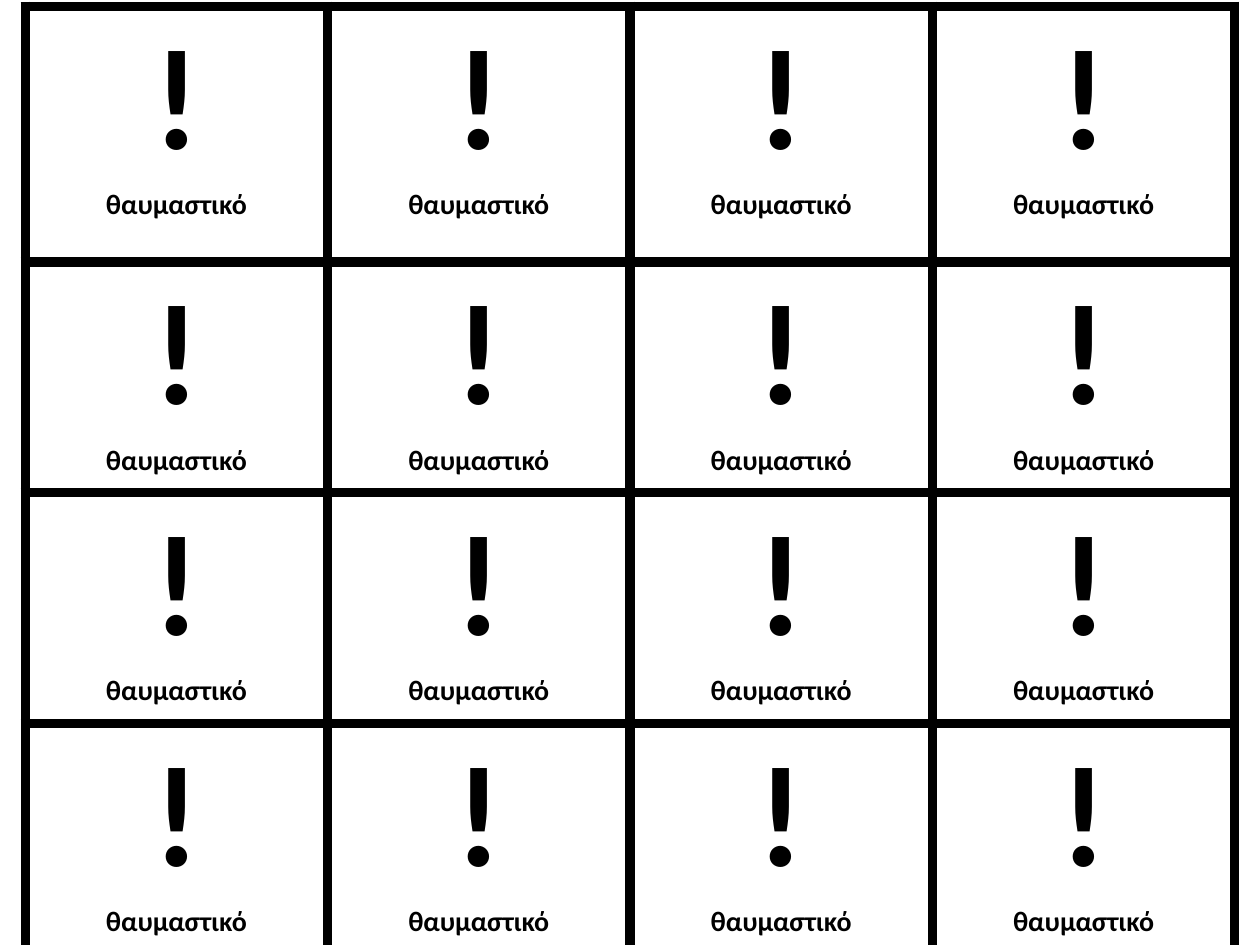
from lxml import etree
from pptx import Presentation
from pptx.dml.color import RGBColor
from pptx.enum.text import PP_ALIGN
from pptx.oxml.ns import qn
from pptx.util import Inches, Pt

CENTER = PP_ALIGN.CENTER
BLANK_LAYOUT = 6
BORDER_SIDES = ("a:lnL", "a:lnR", "a:lnT", "a:lnB")
COLUMN_WIDTHS = [2.4] * 4
ROW_HEIGHTS = [2.03] + [1.83] * 3
CARD_LINES = [("!", 82), ("θαυμαστικό", 16)]


def color(hex_value):
    return RGBColor.from_string(hex_value)


class CardSheet:
    font_name = "Calibri"
    ink = "000000"
    paper = "FFFFFF"
    border_width = 6

    def __init__(self, slide):
        self.slide = slide

    def add_grid(self, left, top, widths, heights):
        frame = self.slide.shapes.add_table(
            len(heights), len(widths), Inches(left), Inches(top),
            Inches(sum(widths)), Inches(sum(heights)))
        table = frame.table
        table.first_row = False
        table.horz_banding = False
        for column, width in zip(table.columns, widths):
            column.width = Inches(width)
        for row, height in zip(table.rows, heights):
            row.height = Inches(height)
        return table

    def set_borders(self, cell):
        properties = cell._tc.get_or_add_tcPr()
        for side in BORDER_SIDES:
            line = etree.SubElement(properties, qn(side), w=str(Pt(self.border_width)))
            fill = etree.SubElement(line, qn("a:solidFill"))
            etree.SubElement(fill, qn("a:srgbClr"), val=self.ink)

    def fill_card(self, cell, lines):
        """Style one cell and write its (text, size) lines."""
        self.set_borders(cell)
        cell.fill.solid()
        cell.fill.fore_color.rgb = color(self.paper)
        cell.text_frame.text = "\n".join(text for text, _ in lines)
        for paragraph, (_, size) in zip(cell.text_frame.paragraphs, lines):
            paragraph.alignment = CENTER
            for run in paragraph.runs:
                run.font.name = self.font_name
                run.font.size = Pt(size)
                run.font.bold = True
                run.font.color.rgb = color(self.ink)


def main():
    presentation = Presentation()
    presentation.slide_width = Inches(10)
    presentation.slide_height = Inches(7.5)
    slide = presentation.slides.add_slide(presentation.slide_layouts[BLANK_LAYOUT])

    sheet = CardSheet(slide)
    table = sheet.add_grid(0.2, 0.05, COLUMN_WIDTHS, ROW_HEIGHTS)
    for cell in table.iter_cells():
        sheet.fill_card(cell, CARD_LINES)

    presentation.save("out.pptx")


if __name__ == "__main__":
    main()
